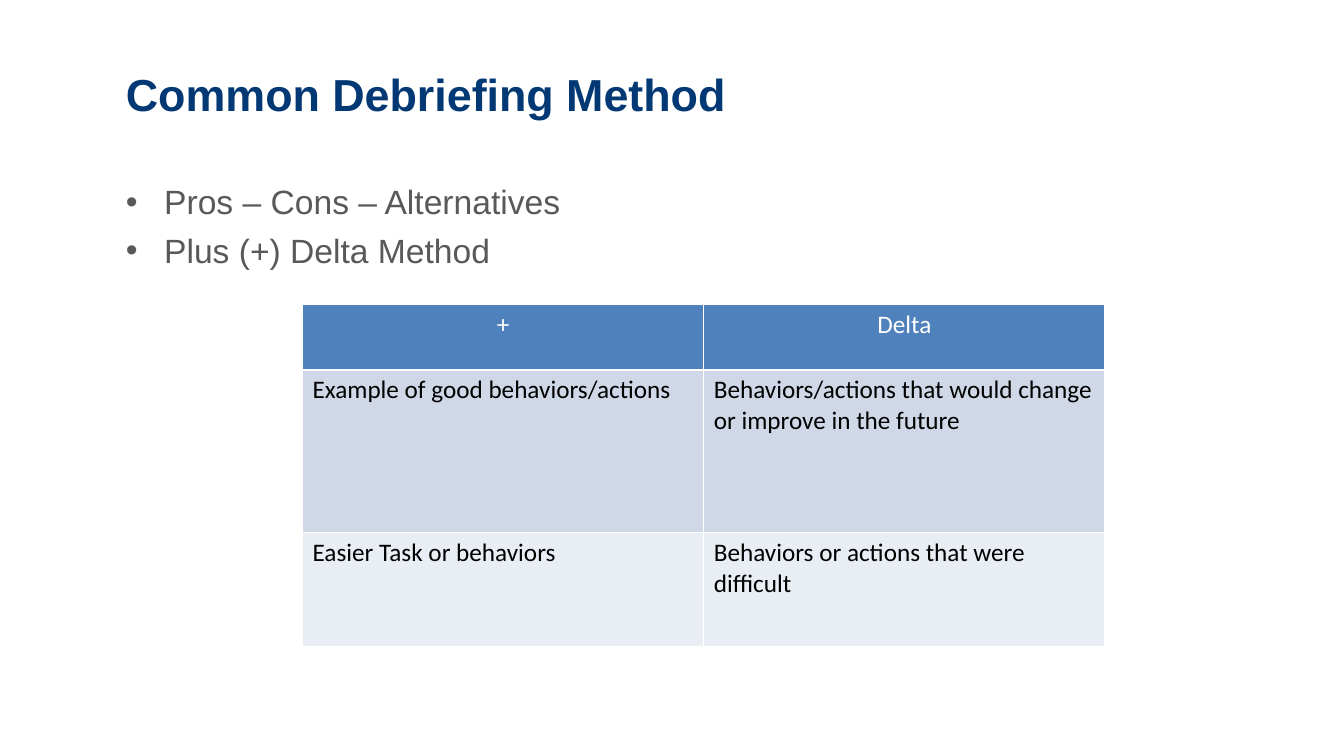
"""Build the debriefing method slide with its plus and delta table."""
from lxml import etree
from pptx import Presentation
from pptx.dml.color import RGBColor
from pptx.enum.text import MSO_ANCHOR, PP_ALIGN
from pptx.oxml.ns import qn
from pptx.util import Inches, Pt

MIDDLE, TOP = MSO_ANCHOR.MIDDLE, MSO_ANCHOR.TOP
CENTER, LEFT = PP_ALIGN.CENTER, PP_ALIGN.LEFT

THEME = {
    "title": ("Arial", 32, "023873", True),
    "body": ("Arial", 24, "595959", False),
    "header": ("Calibri", 18, "FFFFFF", False),
    "cell": ("Calibri", 18, "000000", False),
    "border": "FFFFFF",
    "row fills": ("4F81BD", "D0D8E8", "E9EDF4"),
}
MARGIN, CONTENT_WIDTH = 1.15, 11.52
INDENT = 0.38
COLUMN_WIDTH = 3.98
ROW_HEIGHTS = (0.65, 1.61, 1.13)
BULLETS = ("Pros – Cons – Alternatives", "Plus (+) Delta Method")
ROWS = (
    ("+", "Delta"),
    ("Example of good behaviors/actions",
     "Behaviors/actions that would change or improve in the future"),
    ("Easier Task or behaviors", "Behaviors or actions that were difficult"),
)


def add_run(paragraph, text, style):
    run = paragraph.add_run()
    run.text = text
    name, size, color, bold = THEME[style]
    run.font.name = name
    run.font.size = Pt(size)
    run.font.bold = bold
    run.font.color.rgb = RGBColor.from_string(color)


def add_text_frame(slide, top, height, anchor):
    box = slide.shapes.add_textbox(
        Inches(MARGIN), Inches(top), Inches(CONTENT_WIDTH), Inches(height))
    box.text_frame.word_wrap = True
    box.text_frame.vertical_anchor = anchor
    return box.text_frame


presentation = Presentation()
presentation.slide_width = Inches(13.33)
presentation.slide_height = Inches(7.5)
slide = presentation.slides.add_slide(presentation.slide_layouts[6])

title_frame = add_text_frame(slide, 0.3, 1.25, MIDDLE)
add_run(title_frame.paragraphs[0], "Common Debriefing Method", "title")

body_frame = add_text_frame(slide, 1.75, 4.95, TOP)
for index, text in enumerate(BULLETS):
    paragraph = body_frame.add_paragraph() if index else body_frame.paragraphs[0]
    properties = paragraph._p.get_or_add_pPr()
    properties.set("marL", str(Inches(INDENT)))
    properties.set("indent", str(-Inches(INDENT)))
    bullet_font = etree.SubElement(properties, qn("a:buFont"))
    bullet_font.set("typeface", "Arial")
    etree.SubElement(properties, qn("a:buChar")).set("char", "•")
    if index:
        paragraph.space_before = Pt(6)
    add_run(paragraph, text, "body")

table = slide.shapes.add_table(
    len(ROWS), 2, Inches(3), Inches(3.02),
    Inches(2 * COLUMN_WIDTH), Inches(sum(ROW_HEIGHTS))).table
table.horz_banding = False
for column in table.columns:
    column.width = Inches(COLUMN_WIDTH)

for row_index, texts in enumerate(ROWS):
    table.rows[row_index].height = Inches(ROW_HEIGHTS[row_index])
    for column_index, text in enumerate(texts):
        cell = table.cell(row_index, column_index)
        cell_properties = cell._tc.get_or_add_tcPr()
        for side in ("a:lnL", "a:lnR", "a:lnT", "a:lnB"):
            border = etree.SubElement(cell_properties, qn(side))
            border.set("w", str(Pt(1)))
            border_fill = etree.SubElement(border, qn("a:solidFill"))
            etree.SubElement(border_fill, qn("a:srgbClr")).set("val", THEME["border"])
        cell.fill.solid()
        cell.fill.fore_color.rgb = RGBColor.from_string(THEME["row fills"][row_index])
        paragraph = cell.text_frame.paragraphs[0]
        paragraph.alignment = LEFT if row_index else CENTER
        add_run(paragraph, text, "cell" if row_index else "header")

presentation.save("out.pptx")
